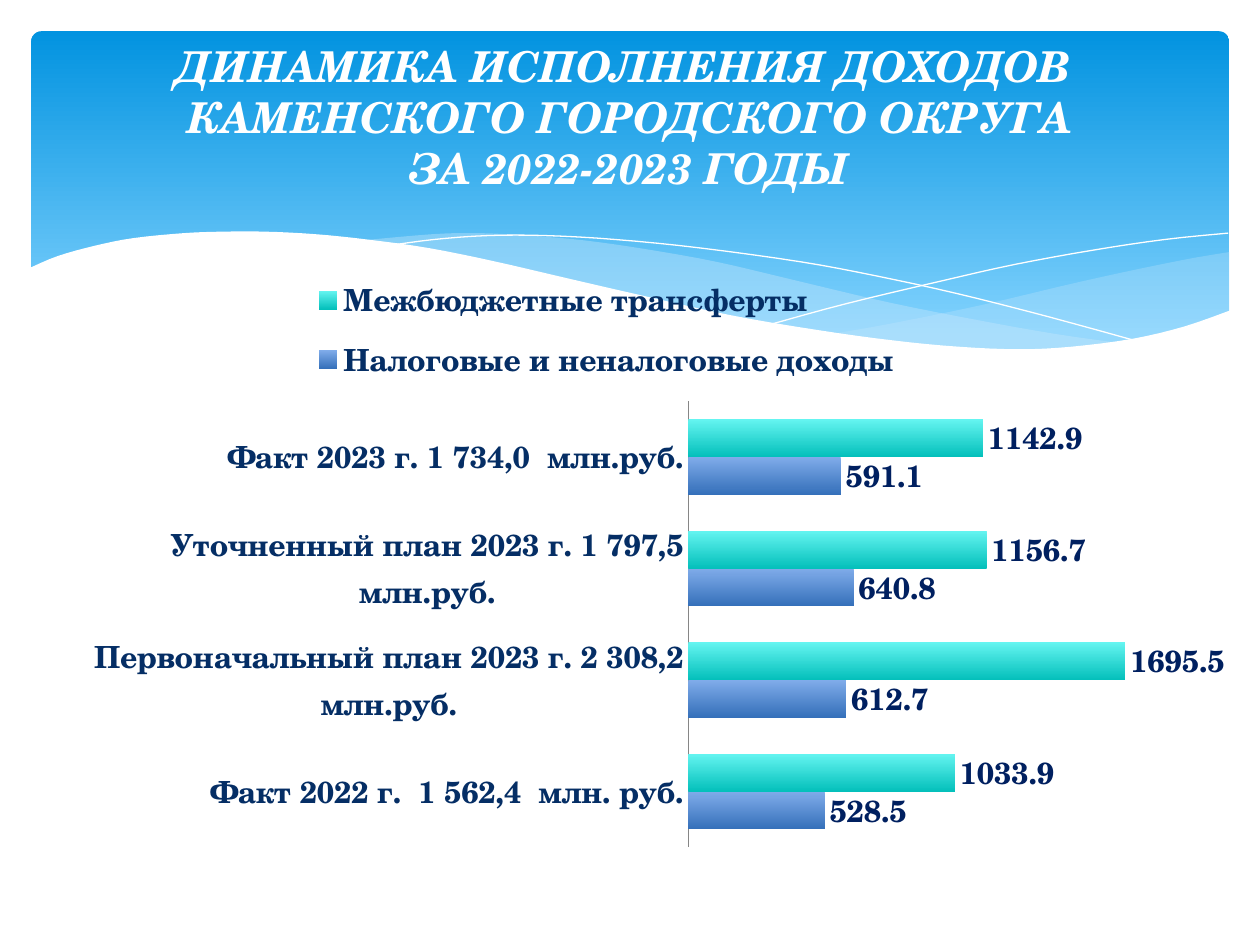
from dataclasses import dataclass
from typing import Optional

from lxml import etree
from pptx import Presentation
from pptx.chart.data import CategoryChartData
from pptx.dml.color import RGBColor
from pptx.enum.chart import XL_CHART_TYPE as ChartType
from pptx.enum.chart import XL_LABEL_POSITION as LabelPos
from pptx.enum.chart import XL_LEGEND_POSITION as LegendPos
from pptx.enum.chart import XL_TICK_LABEL_POSITION as TickLabelPos
from pptx.enum.chart import XL_TICK_MARK as TickMark
from pptx.enum.shapes import MSO_SHAPE as Shape
from pptx.enum.text import MSO_ANCHOR as Anchor
from pptx.enum.text import MSO_AUTO_SIZE as AutoSize
from pptx.enum.text import PP_ALIGN as Align
from pptx.oxml.ns import qn
from pptx.util import Cm, Pt

FONT = "TeX Gyre Schola"
CHART_SIZE = 17.4
Point = tuple[float, float]


@dataclass
class Wave:
    """Outline made of smooth edges, in cm; without a fill it is a thin line."""
    edges: list[list[Point]]
    fill: Optional[str] = None
    opacity: int = 100


@dataclass
class Income:
    name: str
    values: list[float]
    top: str
    bottom: str


WAVES = [
    Wave([[(24.79, 5.08), (23.75, 5.26), (21.87, 5.66), (19.79, 6.15),
           (17.93, 6.53), (16.79, 6.73)],
          [(16.79, 6.73), (18.26, 6.91), (19.53, 7.04), (20.68, 7.06),
           (21.92, 6.99), (23.19, 6.78), (24.1, 6.53), (24.79, 6.27)]],
         "C6E7FC", 29),
    Wave([[(22.68, 6.93), (21.26, 6.73), (19.69, 6.45), (17.93, 6.1),
           (15.98, 5.64), (14.45, 5.28), (13.06, 5.03), (11.81, 4.85),
           (10.67, 4.75), (9.65, 4.7), (8.74, 4.72), (7.26, 4.85)],
          [(7.26, 4.85), (8.69, 5.05), (10.26, 5.36), (12.47, 5.89),
           (14.38, 6.3), (16.1, 6.63), (17.65, 6.86), (19, 7.01),
           (20.22, 7.06), (21.29, 7.06), (22.68, 6.93)]],
         "C6E7FC", 40),
    Wave([[(7.85, 4.95), (8.74, 4.83), (9.83, 4.75), (11, 4.75),
           (12.42, 4.83), (14.12, 5), (16.15, 5.28), (17.65, 5.56),
           (19.3, 5.92), (21.11, 6.38), (23.04, 6.91)]]),
    Wave([[(15.57, 6.53), (17.07, 6.12), (19, 5.66), (20.47, 5.33),
           (22, 5.05), (23.47, 4.83), (24.76, 4.7)]]),
    Wave([[(24.82, 6.25), (23.88, 6.58), (22.83, 6.83), (21.59, 6.99),
           (20.55, 7.04), (19.33, 6.99), (17.98, 6.86), (16.46, 6.65),
           (14.71, 6.35), (12.78, 5.92), (11.35, 5.59), (9.93, 5.26),
           (8.64, 5), (7.42, 4.83), (6.35, 4.72), (5.36, 4.67), (4.5, 4.67),
           (3.71, 4.7), (2.69, 4.8), (1.93, 4.95), (1.17, 5.16), (0.58, 5.41)],
          [(0.58, 8.36), (24.82, 8.36)]],
         "FFFFFF"),
]
PERIODS = ["Факт 2022 г.  1 562,4  млн. руб.",
           "Первоначальный план 2023 г. 2 308,2 млн.руб.",
           "Уточненный план 2023 г. 1 797,5 млн.руб.",
           "Факт 2023 г. 1 734,0  млн.руб."]
INCOMES = [
    Income("Налоговые и неналоговые доходы",
           [528.5, 612.7, 640.8, 591.1], "80ACEA", "3570BA"),
    Income("Межбюджетные трансферты",
           [1033.9, 1695.5, 1156.7, 1142.9], "65F5F1", "04C0BB"),
]
TITLE = ["ДИНАМИКА ИСПОЛНЕНИЯ ДОХОДОВ  КАМЕНСКОГО ГОРОДСКОГО ОКРУГА",
         "ЗА 2022-2023 ГОДЫ"]


def rgb(color: str) -> RGBColor:
    return RGBColor.from_string(color)


def set_font(font, size: float, color: str, italic: bool = False) -> None:
    font.name, font.size = FONT, Pt(size)
    font.bold, font.italic = True, italic
    font.color.rgb = rgb(color)


def fill_down(fill, top: str, bottom: str, end: float = 1) -> None:
    """Vertical gradient from top to bottom."""
    fill.gradient()
    fill.gradient_angle = 270
    for stop, color, pos in zip(fill.gradient_stops, (top, bottom), (0, end)):
        stop.color.rgb = rgb(color)
        stop.position = pos


def smooth(pts: list[Point], steps: int = 4) -> list[Point]:
    """Catmull-Rom curve through the points; two points stay a straight line."""
    if len(pts) < 3:
        return pts
    padded = [pts[0], *pts, pts[-1]]
    curve = [pts[0]]
    for a, b, c, d in zip(padded, padded[1:], padded[2:], padded[3:]):
        for t in (i / steps for i in range(1, steps + 1)):
            x, y = (q + 0.5 * t * (r - p + t * (2 * p - 5 * q + 4 * r - s
                                               + t * (3 * (q - r) + s - p)))
                    for p, q, r, s in zip(a, b, c, d))
            curve.append((x, y))
    return curve


def draw_wave(shapes, wave: Wave) -> None:
    pts = [(Cm(x), Cm(y)) for edge in wave.edges for x, y in smooth(edge)]
    builder = shapes.build_freeform(*pts[0])
    builder.add_line_segments(pts[1:], close=wave.fill is not None)
    sp = builder.convert_to_shape()
    sp.shadow.inherit = False
    if wave.fill is None:
        sp.fill.background()
        sp.line.color.rgb = rgb("FFFFFF")
        sp.line.width = Pt(0)
        return
    sp.line.fill.background()
    sp.fill.solid()
    sp.fill.fore_color.rgb = rgb(wave.fill)
    if wave.opacity < 100:
        clr = sp.fill._xPr.find(".//" + qn("a:srgbClr"))
        etree.SubElement(clr, qn("a:alpha"), val=str(wave.opacity * 1000))


def place(parent, index: int, x: float, y: float, w: float, h: float,
          inner: bool = False) -> None:
    """Manual layout of a chart part, in fractions of the chart."""
    for old in parent.findall(qn("c:layout")):
        parent.remove(old)
    layout = etree.Element(qn("c:layout"))
    manual = etree.SubElement(layout, qn("c:manualLayout"))
    values = {"layoutTarget": "inner"} if inner else {}
    values |= {"xMode": "edge", "yMode": "edge", "x": x, "y": y, "w": w, "h": h}
    for tag, val in values.items():
        etree.SubElement(manual, qn("c:" + tag), val=str(val))
    parent.insert(index, layout)


def draw_chart(shapes) -> None:
    data = CategoryChartData()
    data.categories = PERIODS
    for income in INCOMES:
        data.add_series(income.name, income.values)
    chart = shapes.add_chart(ChartType.BAR_CLUSTERED, Cm(0.89), Cm(5.33),
                             Cm(23.8), Cm(11.99), data).chart
    chart.has_title = False
    set_font(chart.font, CHART_SIZE, "052E65")

    # Bars and their values
    plot = chart.plots[0]
    plot.gap_width, plot.overlap, plot.vary_by_categories = 95, 0, False
    for series, income in zip(plot.series, INCOMES):
        series.invert_if_negative = False
        fill_down(series.format.fill, income.top, income.bottom)
        labels = series.data_labels
        labels.show_value = True
        labels.position = LabelPos.OUTSIDE_END
        set_font(labels.font, CHART_SIZE, "002060")

    # Axes
    cat, val = chart.category_axis, chart.value_axis
    cat.major_tick_mark = cat.minor_tick_mark = TickMark.NONE
    cat.tick_label_position = TickLabelPos.NEXT_TO_AXIS
    cat.format.line.color.rgb = rgb("868686")
    cat.format.line.width = Pt(0.75)
    set_font(cat.tick_labels.font, CHART_SIZE, "052E65")
    val.visible = val.has_major_gridlines = False
    val.major_tick_mark = val.minor_tick_mark = TickMark.NONE
    val.minimum_scale, val.maximum_scale = 0, 2000

    # Legend
    chart.has_legend = True
    legend = chart.legend
    legend.position, legend.include_in_layout = LegendPos.TOP, False
    set_font(legend.font, CHART_SIZE, "052E65")
    place(legend._element, 1, 0.22, 0, 0.52, 0.22)
    place(plot._element.getparent(), 0, 0.55, 0.23, 0.44, 0.75, inner=True)


def draw_title(sp) -> None:
    sp.left, sp.top, sp.width, sp.height = Cm(1.27), Cm(0.8), Cm(22.86), Cm(3.48)
    tf = sp.text_frame
    tf.word_wrap, tf.auto_size = True, AutoSize.NONE
    tf.vertical_anchor = Anchor.TOP
    tf.margin_top = tf.margin_bottom = 0
    p = tf.paragraphs[0]
    p.alignment = Align.CENTER
    for i, line in enumerate(TITLE):
        if i:
            p.add_line_break()
        r = p.add_run()
        r.text = line
        set_font(r.font, 24.3, "FFFFFF", italic=True)


def main() -> None:
    prs = Presentation()
    prs.slide_width, prs.slide_height = Cm(25.4), Cm(19.05)
    slide = prs.slides.add_slide(prs.slide_layouts[5])
    shapes = slide.shapes

    # Blue header with waves
    sp = shapes.add_shape(Shape.ROUNDED_RECTANGLE,
                          Cm(0.63), Cm(0.63), Cm(24.15), Cm(6.86))
    sp.adjustments[0] = 0.03
    sp.shadow.inherit = False
    sp.line.fill.background()
    fill_down(sp.fill, "0293E0", "83D3FE", 0.9)
    for wave in WAVES:
        draw_wave(shapes, wave)

    # Title in front of the header
    title = shapes.title
    shapes._spTree.append(title._element)
    draw_title(title)

    draw_chart(shapes)
    prs.save("out.pptx")


if __name__ == "__main__":
    main()
